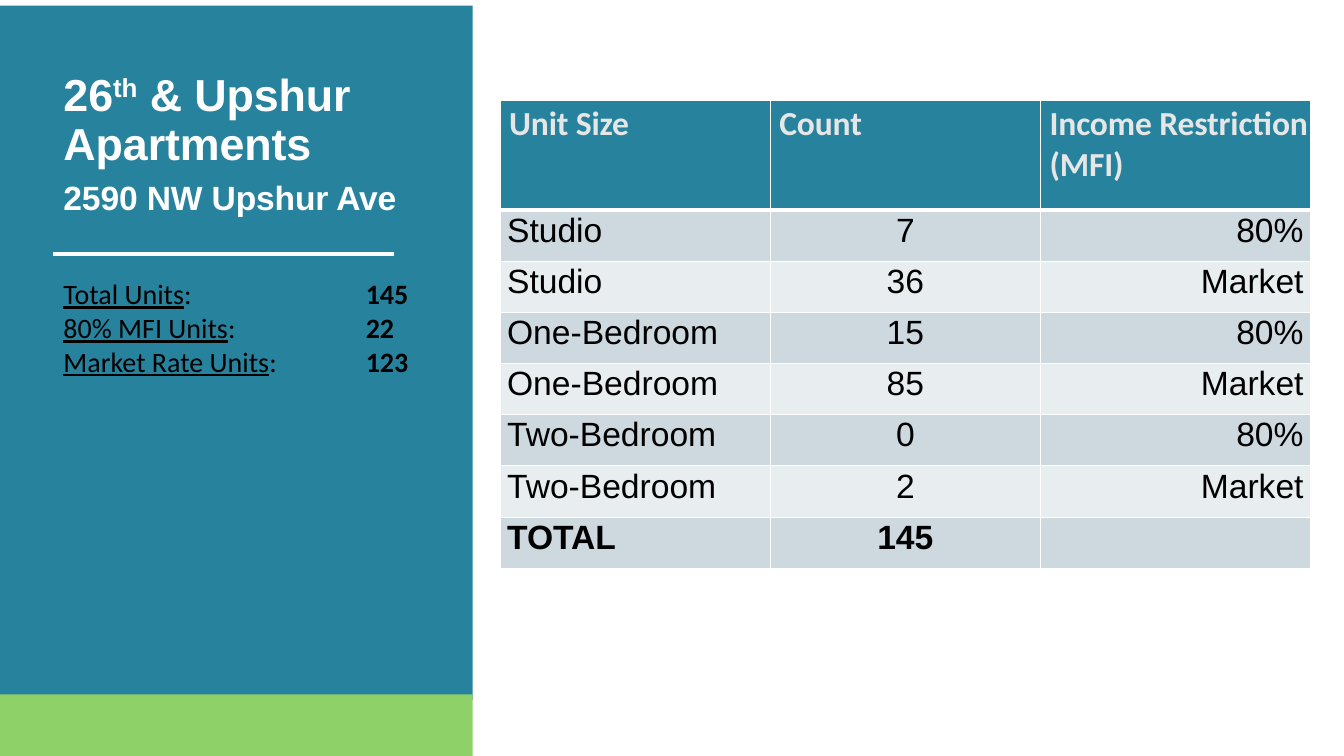
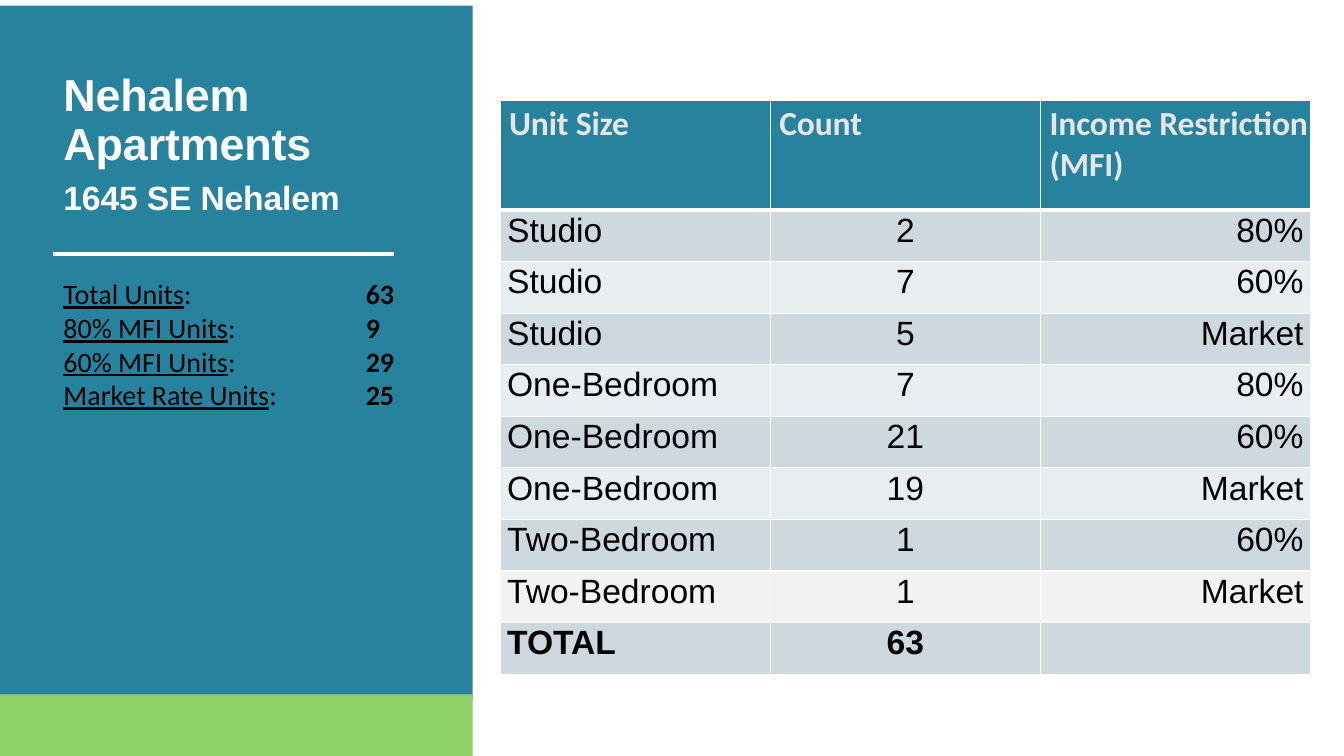
from dataclasses import dataclass

from lxml.etree import SubElement
from pptx import Presentation
from pptx.dml.color import RGBColor
from pptx.enum.shapes import MSO_CONNECTOR, MSO_SHAPE
from pptx.enum.text import MSO_ANCHOR, PP_ALIGN
from pptx.oxml.ns import qn
from pptx.util import Cm, Pt


@dataclass(frozen=True)
class Theme:
    teal: str = "27829D"
    green: str = "8FD169"
    white: str = "FFFFFF"
    black: str = "000000"
    header_text: str = "E7E6E6"
    row_dark: str = "CDD8DF"
    row_light: str = "E8EDF0"
    row_plain: str = "F2F2F2"
    heading_font: str = "Arial"
    label_font: str = "Calibri"
    title_size: int = 32
    address_size: int = 24
    table_size: int = 24
    summary_size: int = 20


theme = Theme()


def add_span(para, text, font, size, color, bold=False, underline=False, **extra):
    """Add one formatted run; extra holds run attributes such as baseline."""
    span = para.add_run()
    span.text = text
    span.font.name = font
    span.font.size = Pt(size)
    span.font.color.rgb = RGBColor.from_string(color)
    span.font.bold = bold
    span.font.underline = underline
    for name, value in extra.items():
        span.font._element.set(name, str(value))


def set_border(cell, side, points):
    """Draw a white border on one side (L, R, T or B) of a cell."""
    line = SubElement(cell._tc.get_or_add_tcPr(), qn(f"a:ln{side}"), w=str(Pt(points)))
    fill = SubElement(line, qn("a:solidFill"))
    SubElement(fill, qn("a:srgbClr"), val=theme.white)


# Content: one entry per slide
headers = ("Unit Size", "Count", "Income Restriction (MFI)")
projects = [
    {
        "name": [("26", 0), ("th", 30000), (" & Upshur Apartments", 0)],
        "address": "2590 NW Upshur Ave",
        "summary": [("Total Units", "145"), ("80% MFI Units", "22"),
                    ("Market Rate Units", "123")],
        "units": [
            ("Studio", "7", "80%"),
            ("Studio", "36", "Market"),
            ("One-Bedroom", "15", "80%"),
            ("One-Bedroom", "85", "Market"),
            ("Two-Bedroom", "0", "80%"),
            ("Two-Bedroom", "2", "Market"),
            ("TOTAL", "145", ""),
        ],
        "row_height": 1.29,
        "plain_row": None,
    },
    {
        "name": [("Nehalem Apartments", 0)],
        "address": "1645 SE Nehalem",
        "summary": [("Total Units", "63"), ("80% MFI Units", "9"),
                    ("60% MFI Units", "29"), ("Market Rate Units", "25")],
        "units": [
            ("Studio", "2", "80%"),
            ("Studio", "7", "60%"),
            ("Studio", "5", "Market"),
            ("One-Bedroom", "7", "80%"),
            ("One-Bedroom", "21", "60%"),
            ("One-Bedroom", "19", "Market"),
            ("Two-Bedroom", "1", "60%"),
            ("Two-Bedroom", "1", "Market"),
            ("TOTAL", "63", ""),
        ],
        "row_height": 1.3,
        "plain_row": 8,
    },
]

# Shared geometry in centimetres: colour, top, height
bands = [(theme.teal, 0.14, 17.5), (theme.green, 17.5, 1.55)]
band_width = 11.91
text_left = 1.6
header_height = 2.75
column_width = 6.81
alignments = (PP_ALIGN.LEFT, PP_ALIGN.CENTER, PP_ALIGN.RIGHT)

deck = Presentation()
deck.slide_width, deck.slide_height = Cm(33.87), Cm(19.05)
title_only = deck.slide_layouts[5]

for project in projects:
    page = deck.slides.add_slide(title_only)

    # Side panel and footer band
    for color, top, height in bands:
        band = page.shapes.add_shape(
            MSO_SHAPE.RECTANGLE, 0, Cm(top), Cm(band_width), Cm(height))
        band.shadow.inherit = False
        band.fill.solid()
        band.fill.fore_color.rgb = RGBColor.from_string(color)
        band.line.fill.background()

    # Rule under the title
    rule = page.shapes.add_connector(
        MSO_CONNECTOR.STRAIGHT, Cm(1.34), Cm(6.4), Cm(9.93), Cm(6.4))
    rule.line.color.rgb = RGBColor.from_string(theme.white)
    rule.line.width = Pt(2.58)
    SubElement(rule._element.spPr, qn("a:effectLst"))

    # Unit summary, with the numbers on a tab stop
    summary = project["summary"]
    box = page.shapes.add_textbox(
        Cm(text_left), Cm(6.68), Cm(8.97), Cm(2.73 + 0.86 * len(summary)))
    frame = box.text_frame
    frame.word_wrap = True
    frame.margin_left = frame.margin_right = frame.margin_bottom = 0
    frame.margin_top = Cm(0.3)
    for index, (label, count) in enumerate(summary):
        para = frame.add_paragraph() if index else frame.paragraphs[0]
        tabs = SubElement(para._p.get_or_add_pPr(), qn("a:tabLst"))
        SubElement(tabs, qn("a:tab"), pos=str(Cm(7.62)), algn="l")
        style = (theme.label_font, theme.summary_size, theme.black)
        add_span(para, label, *style, underline=True)
        add_span(para, ":\t", *style)
        add_span(para, count, *style, bold=True)

    # Title and address, brought in front of the panel
    title = page.shapes.title
    page.shapes.element.append(title.element)
    title.left, title.top = Cm(text_left), Cm(1.63)
    title.width, title.height = Cm(8.99), Cm(3.81)
    frame = title.text_frame
    frame.word_wrap = True
    frame.vertical_anchor = MSO_ANCHOR.TOP
    frame.margin_left = frame.margin_right = frame.margin_bottom = 0
    frame.margin_top = Cm(0.18)
    para = frame.paragraphs[0]
    para.alignment = PP_ALIGN.LEFT
    para.line_spacing = Pt(34.7)
    para.space_before = Pt(5.2)
    for text, baseline in project["name"]:
        add_span(para, text, theme.heading_font, theme.title_size, theme.white,
                 bold=True, baseline=baseline, spc=-10)
    para.add_line_break()
    add_span(para, project["address"], theme.heading_font, theme.address_size,
             theme.white, bold=True, spc=-10)

    # Unit table
    rows = [headers, *project["units"]]
    row_height = project["row_height"]
    table = page.shapes.add_table(
        len(rows), len(headers), Cm(12.6), Cm(2.54), Cm(column_width * len(headers)),
        Cm(header_height + row_height * len(project["units"]))).table
    for column in table.columns:
        column.width = Cm(column_width)
    for row_index, row in enumerate(rows):
        is_header = row_index == 0
        table.rows[row_index].height = Cm(header_height if is_header else row_height)
        if is_header:
            fill_color = theme.teal
        elif row_index == project["plain_row"]:
            fill_color = theme.row_plain
        else:
            fill_color = theme.row_dark if row_index % 2 else theme.row_light
        for column_index, text in enumerate(row):
            cell = table.cell(row_index, column_index)
            for side in "LRTB":
                thick = (row_index, side) in ((0, "B"), (1, "T"))
                set_border(cell, side, 3 if thick else 1)
            cell.fill.solid()
            cell.fill.fore_color.rgb = RGBColor.from_string(fill_color)
            cell.margin_left = Cm(0.23 if is_header else 0.18)
            cell.margin_right = Cm(0 if is_header else 0.18)
            cell.margin_top = Cm(0.08 if is_header else 0)
            cell.margin_bottom = 0
            para = cell.text_frame.paragraphs[0]
            if is_header:
                para.space_before = Pt(2.1)
                add_span(para, text, theme.label_font, theme.table_size,
                         theme.header_text, bold=True, spc=-10)
            elif text:
                para.alignment = alignments[column_index]
                para.line_spacing = 1.05
                para.space_after = Pt(8)
                add_span(para, text, theme.heading_font, theme.table_size,
                         theme.black, bold=row[0] == "TOTAL")

deck.save("out.pptx")
